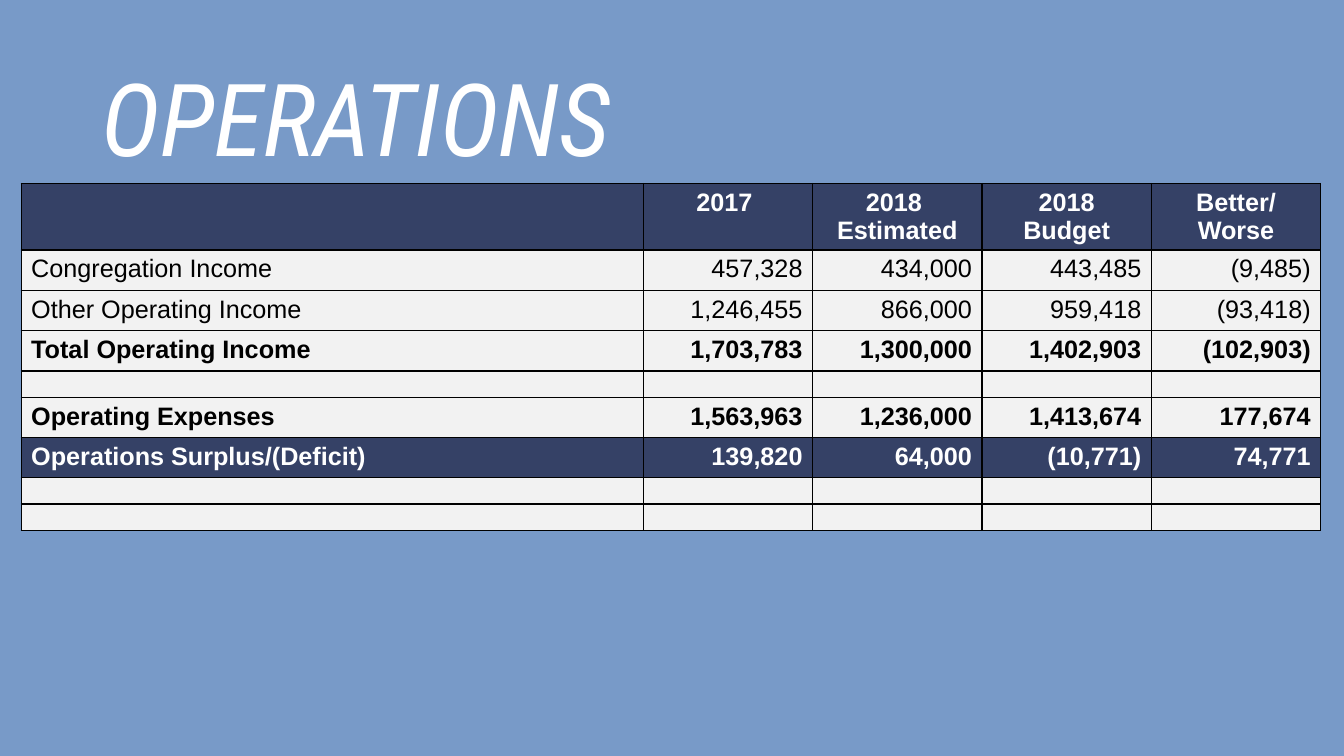
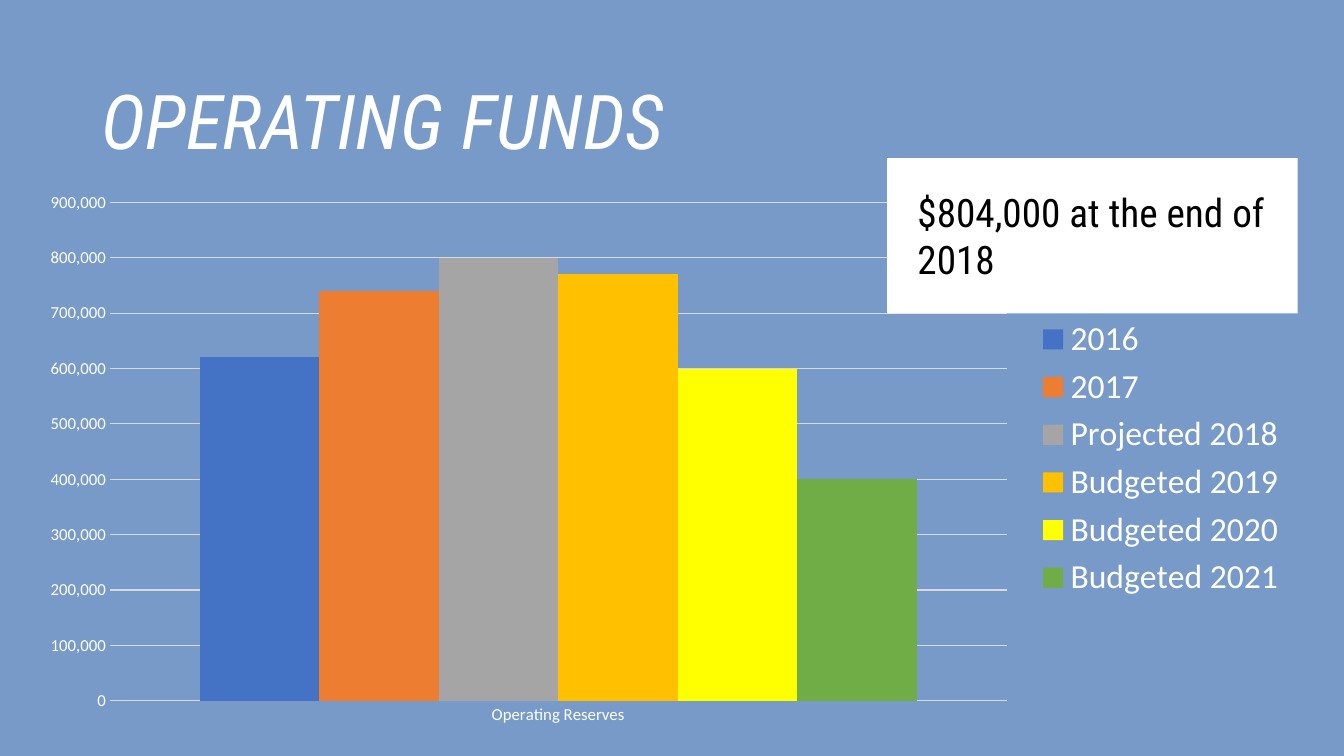
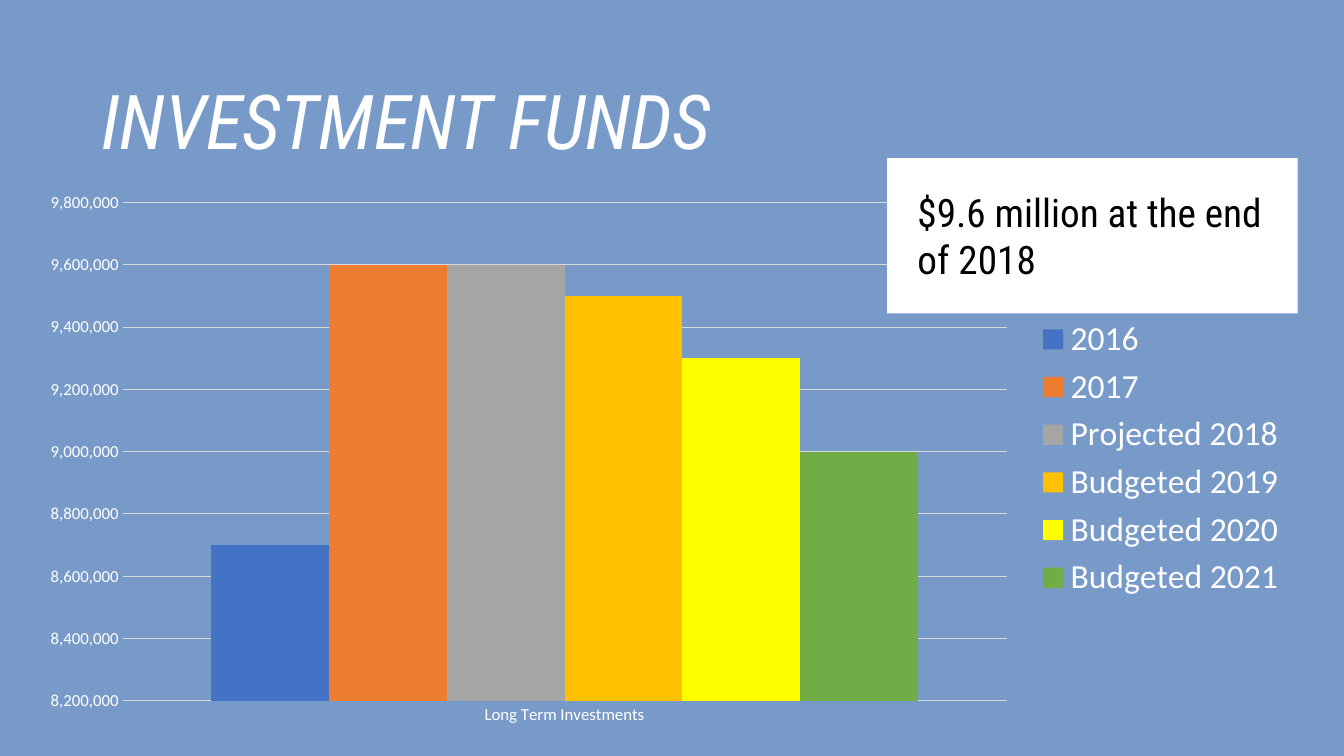
from dataclasses import dataclass

from lxml import etree
from pptx import Presentation
from pptx.chart.data import CategoryChartData
from pptx.dml.color import RGBColor
from pptx.enum.chart import XL_CHART_TYPE, XL_LEGEND_POSITION, XL_TICK_MARK
from pptx.enum.shapes import MSO_SHAPE
from pptx.enum.text import MSO_ANCHOR, MSO_AUTO_SIZE, PP_ALIGN
from pptx.oxml.ns import qn
from pptx.util import Pt

PX = 9144
COLUMN = XL_CHART_TYPE.COLUMN_CLUSTERED
RIGHT_KEY = XL_LEGEND_POSITION.RIGHT
NO_TICK = XL_TICK_MARK.NONE
RECT = MSO_SHAPE.RECTANGLE
TOP, BOTTOM = MSO_ANCHOR.TOP, MSO_ANCHOR.BOTTOM
GROW = MSO_AUTO_SIZE.SHAPE_TO_FIT_TEXT
LEFT, CENTER, RIGHT = PP_ALIGN.LEFT, PP_ALIGN.CENTER, PP_ALIGN.RIGHT


@dataclass(frozen=True)
class Theme:
    """Colours, fonts and type sizes of the deck."""
    back: str = "789AC8"
    navy: str = "354166"
    pale: str = "F2F2F2"
    white: str = "FFFFFF"
    black: str = "000000"
    grid: str = "D9D9D9"
    bars: tuple = ("4472C4", "ED7D31", "A5A5A5", "FFC000", "FFFF00", "70AD47")
    head: str = "Roboto Condensed"
    body: str = "Arial"
    plot: str = "Calibri"
    large: int = 72
    title: int = 54
    note: int = 28
    key: int = 24
    cell: int = 18
    axis: int = 12
    chart: int = 10
    gap: int = 8


THEME = Theme()
YEARS = ("2016", "2017", "Projected 2018",
         "Budgeted 2019", "Budgeted 2020", "Budgeted 2021")
COLS = (617, 168, 168, 168, 168)
HEADS = ("", "2017 ", "2018 \nEstimated", "2018 Budget", "Better/\nWorse")
BLANK = ("",) * len(COLS)
ROWS = (
    ("head", HEADS),
    ("plain", ("Congregation Income", "457,328", "434,000", "443,485", "(9,485)")),
    ("plain", ("Other Operating Income", "1,246,455", "866,000", "959,418", "(93,418)")),
    ("total", ("Total Operating Income", "1,703,783", "1,300,000", "1,402,903", "(102,903)")),
    ("gap", BLANK),
    ("total", ("Operating Expenses", "1,563,963", "1,236,000", "1,413,674", "177,674")),
    ("sum", ("Operations Surplus/(Deficit)", "139,820", "64,000", "(10,771)", "74,771")),
    ("gap", BLANK),
    ("gap", BLANK),
)
HIGH = {"head": 66, "gap": 26}
FUNDS = (
    ("OPERATING FUNDS", "Operating Reserves", "$804,000 at the end of 2018",
     (620000, 740000, 800000, 770000, 600000, 400000), (0, 900000, 100000)),
    ("INVESTMENT FUNDS", "Long Term Investments", "$9.6 million at the end of 2018",
     (8700000, 9600000, 9600000, 9500000, 9300000, 9000000),
     (8200000, 9800000, 200000)),
)


def px(*nums):
    """Turn px into EMU."""
    return [num * PX for num in nums]


def paint(fill, color):
    """Give a solid fill."""
    fill.solid()
    fill.fore_color.rgb = RGBColor.from_string(color)


def style(font, face, size, color, bold=False, slant=False):
    """Set every trait of a font."""
    font.name, font.size = face, Pt(size)
    font.bold, font.italic = bold, slant
    font.color.rgb = RGBColor.from_string(color)


def write(para, text, *look, **more):
    """Add one styled run."""
    run = para.add_run()
    run.text = text
    style(run.font, *look, **more)


def start(deck, title, size, top):
    """Add a slide with its ground and title."""
    slide = deck.slides.add_slide(deck.slide_layouts[6])
    paint(slide.background.fill, THEME.back)
    frame = slide.shapes.add_textbox(*px(91, top, 1150, 87)).text_frame
    frame.word_wrap = True
    frame.vertical_anchor = BOTTOM
    para = frame.paragraphs[0]
    para.line_spacing = 0.9
    write(para, title, THEME.head, size, THEME.white, slant=True)
    return slide


def edge(cell):
    """Draw thin black borders round a cell."""
    props = cell._tc.get_or_add_tcPr()
    for side in ("a:lnL", "a:lnR", "a:lnT", "a:lnB"):
        line = etree.SubElement(props, qn(side), w=str(Pt(1)))
        fill = etree.SubElement(line, qn("a:solidFill"))
        etree.SubElement(fill, qn("a:srgbClr"), val=THEME.black)


def fill_cell(cell, text, kind, align):
    """Set the look and text of one cell."""
    dark = kind in ("head", "sum")
    edge(cell)
    paint(cell.fill, THEME.navy if dark else THEME.pale)
    cell.margin_bottom = 0
    frame = cell.text_frame
    if not text:
        etree.SubElement(frame.paragraphs[0]._p, qn("a:endParaRPr"),
                         sz=str(THEME.gap * 100))
    for i, line in enumerate(text.split("\n") if text else ()):
        para = frame.add_paragraph() if i else frame.paragraphs[0]
        para.alignment = align
        write(para, line, THEME.body, THEME.cell,
              THEME.white if dark else THEME.black, bold=kind != "plain")


def add_grid(slide):
    """Add the table of operating figures."""
    highs = [HIGH.get(kind, 40) for kind, _ in ROWS]
    box = px(21, 182, sum(COLS), sum(highs))
    table = slide.shapes.add_table(len(ROWS), len(COLS), *box).table
    table.first_row = table.horz_banding = False
    for col, wide in zip(table.columns, COLS):
        col.width = wide * PX
    for r, (kind, texts) in enumerate(ROWS):
        table.rows[r].height = highs[r] * PX
        for c, text in enumerate(texts):
            align = CENTER if kind == "head" else RIGHT if c else LEFT
            fill_cell(table.cell(r, c), text, kind, align)


def set_axes(chart, scale):
    """Style both axes and fix the value scale."""
    cat, val = chart.category_axis, chart.value_axis
    for axis in (cat, val):
        axis.major_tick_mark = axis.minor_tick_mark = NO_TICK
        style(axis.tick_labels.font, THEME.plot, THEME.axis, THEME.white)
    val.minimum_scale, val.maximum_scale, val.major_unit = scale
    val.tick_labels.number_format = "#,##0"
    val.tick_labels.number_format_is_linked = False
    val.format.line.fill.background()
    val.has_major_gridlines = True
    for line in (cat.format.line, val.major_gridlines.format.line):
        paint(line.fill, THEME.grid)
        line.width = Pt(0.75)


def add_bars(slide, name, vals, scale):
    """Add the column chart of one fund."""
    data = CategoryChartData(number_format="#,##0")
    data.categories = [name]
    for year, val in zip(YEARS, vals):
        data.add_series(year, [val])
    chart = slide.shapes.add_chart(COLUMN, *px(25, 180, 1262, 550), data).chart
    style(chart.font, THEME.plot, THEME.chart, THEME.black)
    chart.has_title = False
    chart.has_legend = True
    chart.legend.position = RIGHT_KEY
    chart.legend.include_in_layout = False
    style(chart.legend.font, THEME.plot, THEME.key, THEME.white)
    plot = chart.plots[0]
    plot.vary_by_categories = False
    plot.gap_width, plot.overlap = 150, 0
    for bar, color in zip(plot.series, THEME.bars):
        paint(bar.format.fill, color)
        bar.invert_if_negative = False
    set_axes(chart, scale)


def add_note(slide, text):
    """Add the white box with the key figure."""
    box = slide.shapes.add_shape(RECT, *px(880, 157, 407, 154))
    box.shadow.inherit = False
    paint(box.fill, THEME.white)
    box.line.fill.background()
    frame = box.text_frame
    frame.word_wrap = True
    frame.auto_size = GROW
    frame.vertical_anchor = TOP
    frame.margin_left = frame.margin_right = 30 * PX
    frame.margin_top = frame.margin_bottom = 30 * PX
    para = frame.paragraphs[0]
    para.alignment = LEFT
    write(para, text, THEME.head, THEME.note, THEME.black)


def main():
    """Build and save the deck."""
    deck = Presentation()
    deck.slide_width, deck.slide_height = px(1333, 750)
    add_grid(start(deck, "OPERATIONS", THEME.large, 95))
    for title, name, note, vals, scale in FUNDS:
        slide = start(deck, title, THEME.title, 82)
        add_bars(slide, name, vals, scale)
        add_note(slide, note)
    deck.save("out.pptx")


if __name__ == "__main__":
    main()
